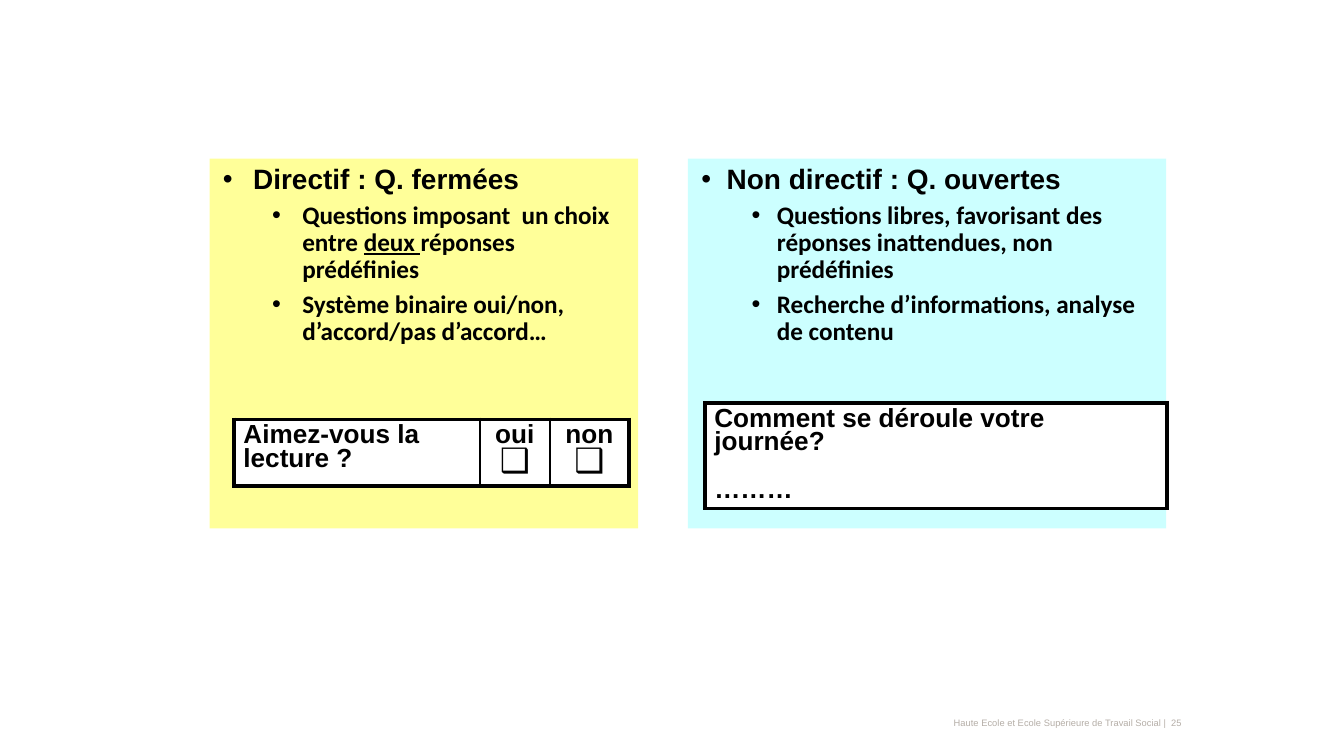
from lxml import etree
from pptx import Presentation
from pptx.dml.color import RGBColor
from pptx.enum.text import MSO_ANCHOR, MSO_AUTO_SIZE, PP_ALIGN
from pptx.oxml.ns import qn
from pptx.util import Cm, Pt

LEFT, CENTER, RIGHT = PP_ALIGN.LEFT, PP_ALIGN.CENTER, PP_ALIGN.RIGHT
TOP, MIDDLE = MSO_ANCHOR.TOP, MSO_ANCHOR.MIDDLE
NO_FIT = MSO_AUTO_SIZE.NONE

BLACK = RGBColor(0x00, 0x00, 0x00)
WHITE = RGBColor(0xFF, 0xFF, 0xFF)
YELLOW = RGBColor(0xFF, 0xFF, 0x99)
CYAN = RGBColor(0xCC, 0xFF, 0xFF)
GREY = RGBColor(0xB5, 0xAE, 0xA7)

THICK, THIN = Pt(2.25), Pt(1)

HEADING = {"name": "Arial", "size": Pt(15), "bold": True}
POINT = {"name": "Calibri", "size": Pt(13.5), "bold": True}
ANSWER = {"name": "Arial", "size": Pt(14), "bold": True}
CHECKBOX = {"name": "Arial", "size": Pt(18), "bold": True}
CREDIT = {"name": "Arial", "size": Pt(5)}

CELL_FORMAT = {"margin_left": Cm(0.18), "margin_right": Cm(0.18),
               "margin_top": Cm(0.1), "margin_bottom": Cm(0.1),
               "vertical_anchor": TOP}


def apply(target, values):
    for attribute, value in values.items():
        setattr(target, attribute, value)


def add_text(paragraph, text, font, color=BLACK, underline=None):
    run = paragraph.add_run()
    run.text = text
    apply(run.font, {**font, "underline": underline})
    run.font.color.rgb = color


def next_paragraph(frame, index):
    return frame.add_paragraph() if index else frame.paragraphs[0]


def add_bullet(paragraph, indent, hanging):
    properties = paragraph._p.get_or_add_pPr()
    properties.set("marL", str(Cm(indent)))
    properties.set("indent", str(-Cm(hanging)))
    etree.SubElement(properties, qn("a:buFont"), typeface="Arial")
    etree.SubElement(properties, qn("a:buChar"), char="•")


def place_question_type(body, box, color, hanging, point_indent, heading, points):
    apply(body, dict(zip(("left", "top", "width", "height"), map(Cm, box))))
    body.fill.solid()
    body.fill.fore_color.rgb = color
    frame = body.text_frame
    apply(frame, {"auto_size": NO_FIT, "vertical_anchor": TOP, "word_wrap": True})
    for index, pieces in enumerate([[heading], *points]):
        paragraph = next_paragraph(frame, index)
        add_bullet(paragraph, point_indent if index else hanging, hanging)
        apply(paragraph, {"level": min(index, 1), "alignment": LEFT,
                          "line_spacing": 0.9,
                          "space_before": Pt(3.8 if index else 0)})
        for position, piece in enumerate(pieces):
            add_text(paragraph, piece, POINT if index else HEADING,
                     underline=position == 1)


def border_cell(cell, first, last):
    properties = cell._tc.get_or_add_tcPr()
    edges = {"L": THICK if first else THIN, "R": THICK if last else THIN,
             "T": THICK, "B": THICK}
    for side, width in edges.items():
        line = etree.SubElement(properties, qn(f"a:ln{side}"), w=str(width))
        fill = etree.SubElement(line, qn("a:solidFill"))
        etree.SubElement(fill, qn("a:srgbClr"), val=str(BLACK))


def place_example(slide, box, widths, cells):
    left, top, width, height = map(Cm, box)
    example = slide.shapes.add_table(1, len(cells), left, top, width, height).table
    apply(example, {"first_row": False, "horz_banding": False})
    for index, (column_width, (alignment, lines)) in enumerate(zip(widths, cells)):
        example.columns[index].width = Cm(column_width)
        cell = example.cell(0, index)
        border_cell(cell, index == 0, index == len(cells) - 1)
        cell.fill.solid()
        cell.fill.fore_color.rgb = WHITE
        apply(cell, CELL_FORMAT)
        for position, (text, font, gap) in enumerate(lines):
            paragraph = next_paragraph(cell.text_frame, position)
            apply(paragraph, {"alignment": alignment, "line_spacing": 0.8,
                              "space_before": Pt(gap)})
            add_text(paragraph, text, font)


def place_credit(slide, box):
    frame = slide.shapes.add_textbox(*map(Cm, box)).text_frame
    apply(frame, {"word_wrap": True, "vertical_anchor": MIDDLE,
                  "margin_left": 0, "margin_right": 0,
                  "margin_top": 0, "margin_bottom": 0})
    paragraph = frame.paragraphs[0]
    apply(paragraph, {"alignment": RIGHT, "line_spacing": Pt(7)})
    add_text(paragraph, "Haute Ecole et Ecole Supérieure de Travail Social |  25",
             CREDIT, GREY)


def build_questions_slide(deck):
    slide = deck.slides.add_slide(deck.slide_layouts[3])
    title, closed, opened = slide.placeholders
    title.element.getparent().remove(title.element)

    place_question_type(
        closed, (3.96, 3, 8.1, 6.99), YELLOW, 0.57, 1.5,
        "Directif : Q. fermées",
        [["Questions imposant  un choix entre ", "deux ", "réponses prédéfinies"],
         ["Système binaire oui/non, d’accord/pas d’accord…"]])
    place_question_type(
        opened, (13, 3, 9.04, 6.99), CYAN, 0.48, 1.43,
        "Non directif : Q. ouvertes",
        [["Questions libres, favorisant des réponses inattendues, non prédéfinies"],
         ["Recherche d’informations, analyse de contenu"]])

    choices = [(CENTER, [(choice, ANSWER, 0), ("❑", CHECKBOX, 0)])
               for choice in ("oui", "non")]
    place_example(slide, (4.42, 7.93, 7.47, 1.26), (4.65, 1.32, 1.5),
                  [(LEFT, [("Aimez-vous la lecture ?", ANSWER, 0)]), *choices])
    place_example(slide, (13.32, 7.62, 8.73, 1.97), (8.73,),
                  [(LEFT, [("Comment se déroule votre journée?", ANSWER, 0),
                           ("………", ANSWER, 13)])])
    place_credit(slide, (16.08, 13.51, 6.27, 0.25))


def main():
    deck = Presentation()
    apply(deck, {"slide_width": Cm(25.4), "slide_height": Cm(14.29)})
    build_questions_slide(deck)
    deck.save("out.pptx")


if __name__ == "__main__":
    main()
